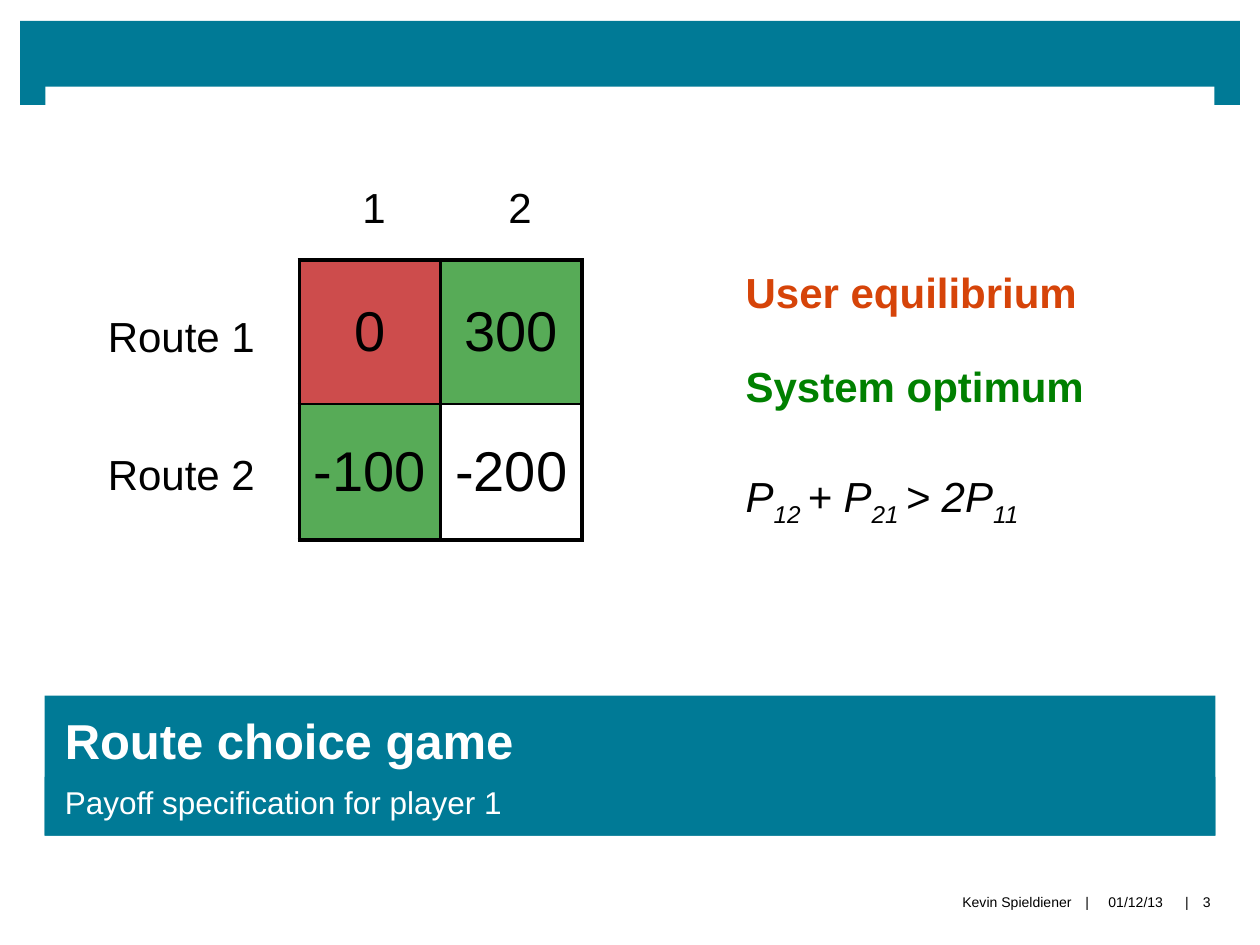
import pptx
import pptx.util
import pptx.dml.color
import pptx.enum.shapes
import pptx.enum.text
import pptx.oxml.ns
from lxml import etree

Pt = pptx.util.Pt
Align = pptx.enum.text.PP_ALIGN
Anchor = pptx.enum.text.MSO_ANCHOR
qn = pptx.oxml.ns.qn

HUES = {
    "teal": "007A96",
    "black": "000000",
    "white": "FFFFFF",
    "red": "B90000",
    "green": "008000",
    "orange": "D64409",
}


def hue(name):
    return pptx.dml.color.RGBColor.from_string(HUES[name])


def write(frame, text, size=24, color="black", bold=False, slant=False,
          align=Align.LEFT, anchor=Anchor.TOP, pad=(7.2, 3.6, 7.2, 3.6),
          wrap=False):
    frame.word_wrap = wrap
    frame.vertical_anchor = anchor
    frame.margin_left, frame.margin_top, frame.margin_right, frame.margin_bottom = map(Pt, pad)
    line = frame.paragraphs[0]
    line.alignment = align
    parts = [(text, 0)] if isinstance(text, str) else text
    for words, base in parts:
        run = line.add_run()
        run.text = words
        font = run.font
        font.name, font.size = "Arial", Pt(size)
        font.bold, font.italic = bold, slant
        font.color.rgb = hue(color)
        if base:
            font._element.set("baseline", str(base * 1000))


def label(slide, box, text, **fmt):
    shape = slide.shapes.add_textbox(*map(Pt, box))
    write(shape.text_frame, text, **fmt)


def block(slide, box):
    shape = slide.shapes.add_shape(
        pptx.enum.shapes.MSO_SHAPE.RECTANGLE, *map(Pt, box))
    shape.shadow.inherit = False
    shape.fill.solid()
    shape.fill.fore_color.rgb = hue("teal")
    shape.line.fill.background()
    return shape


def header(slide, box):
    x, y, w, h = box
    bar, tab = 37.5, 14.5
    block(slide, (x, y, w, bar))
    for left in (x, x + w - tab):
        block(slide, (left, y + bar - 2.5, tab, h - bar + 2.5))


def banner(slide, box, title, note):
    x, y, w, h = box
    low = 33.5
    head = block(slide, box)
    write(head.text_frame, title, size=28, color="white", bold=True,
          pad=(11.5, 8.5, 11.5, 0), wrap=True)
    foot = block(slide, (x, y + h - low, w, low))
    write(foot.text_frame, note, size=18, color="white",
          anchor=Anchor.BOTTOM, pad=(11.5, 0, 11.5, 8.5), wrap=True)


def footer(slide, box, name, date, page):
    x, y, w, h = box
    parts = [
        (0, 252.5, name, Align.RIGHT),
        (257, 8.5, "|", Align.CENTER),
        (265, 48, date, Align.CENTER),
        (314, 8.5, "|", Align.CENTER),
        (319, 21, page, Align.CENTER),
    ]
    for left, wide, text, align in parts:
        label(slide, (x + left, y, wide, h), text, size=8, align=align,
              anchor=Anchor.MIDDLE, pad=(0, 0, 0, 0))


def edge(cell, sides):
    props = cell._tc.get_or_add_tcPr()
    for spot, (side, width) in enumerate(sides.items()):
        line = etree.Element(qn("a:ln" + side), w=str(Pt(width)))
        fill = etree.SubElement(line, qn("a:solidFill"))
        etree.SubElement(fill, qn("a:srgbClr"), val=HUES["black"])
        props.insert(spot, line)


def paint(cell, color, alpha):
    if not color:
        cell.fill.background()
        return
    cell.fill.solid()
    cell.fill.fore_color.rgb = hue(color)
    tint = cell._tc.tcPr.find(".//" + qn("a:srgbClr"))
    etree.SubElement(tint, qn("a:alpha"), val=str(alpha * 1000))


def matrix(slide, box, rows):
    x, y, w, h = box
    grid = slide.shapes.add_table(2, 2, *map(Pt, box)).table
    grid.first_row = grid.horz_banding = False
    for row, high in zip(grid.rows, (82.5, h - 82.5)):
        row.height = Pt(high)
    for i, row in enumerate(rows):
        for j, (text, color, alpha) in enumerate(row):
            cell = grid.cell(i, j)
            write(cell.text_frame, text, size=32, align=Align.CENTER, wrap=True)
            cell.vertical_anchor = Anchor.MIDDLE
            paint(cell, color, alpha)
            edge(cell, {
                "L": 1.5 if j else 2.25,
                "R": 2.25 if j else 1.5,
                "T": 1.5 if i else 2.25,
                "B": 2.25 if i else 1.5,
            })


def game(slide, box):
    x, y, w, h = box
    for i in range(2):
        label(slide, (x + 145.5 + 83.5 * i, y, 28, 36), str(i + 1))
        label(slide, (x, y + 74 + 78.5 * i, 99, 36), f"Route {i + 1}")
    matrix(slide, (x + 116.5, y + 48.5, w - 116.5, h - 48.5), [
        [("0", "red", 70), ("300", "green", 66)],
        [("-100", "green", 66), ("-200", None, 0)],
    ])


def legend(slide, box):
    x, y, w, h = box
    label(slide, (x, y, w, 36), "User equilibrium", color="orange", bold=True)
    label(slide, (x, y + 54, w, 36), "System optimum", color="green", bold=True)
    rule = [("P", 0), ("12 ", -25), ("+ P", 0), ("21 ", -25),
            ("> 2P", 0), ("11", -25)]
    label(slide, (x, y + h - 36, w, 36), rule, slant=True)


def main():
    deck = pptx.Presentation()
    deck.slide_width, deck.slide_height = Pt(720), Pt(540)
    slide = deck.slides.add_slide(deck.slide_layouts[6])
    header(slide, (11.5, 12, 697, 48))
    banner(slide, (25.5, 397.5, 669, 80), "Route choice game",
           "Payoff specification for player 1")
    footer(slide, (360, 497, 340, 36.5), "Kevin Spieldiener", "01/12/13", "3")
    game(slide, (54.5, 100, 278, 208.5))
    legend(slide, (419, 148.5, 216, 153))
    deck.save("out.pptx")


if __name__ == "__main__":
    main()
